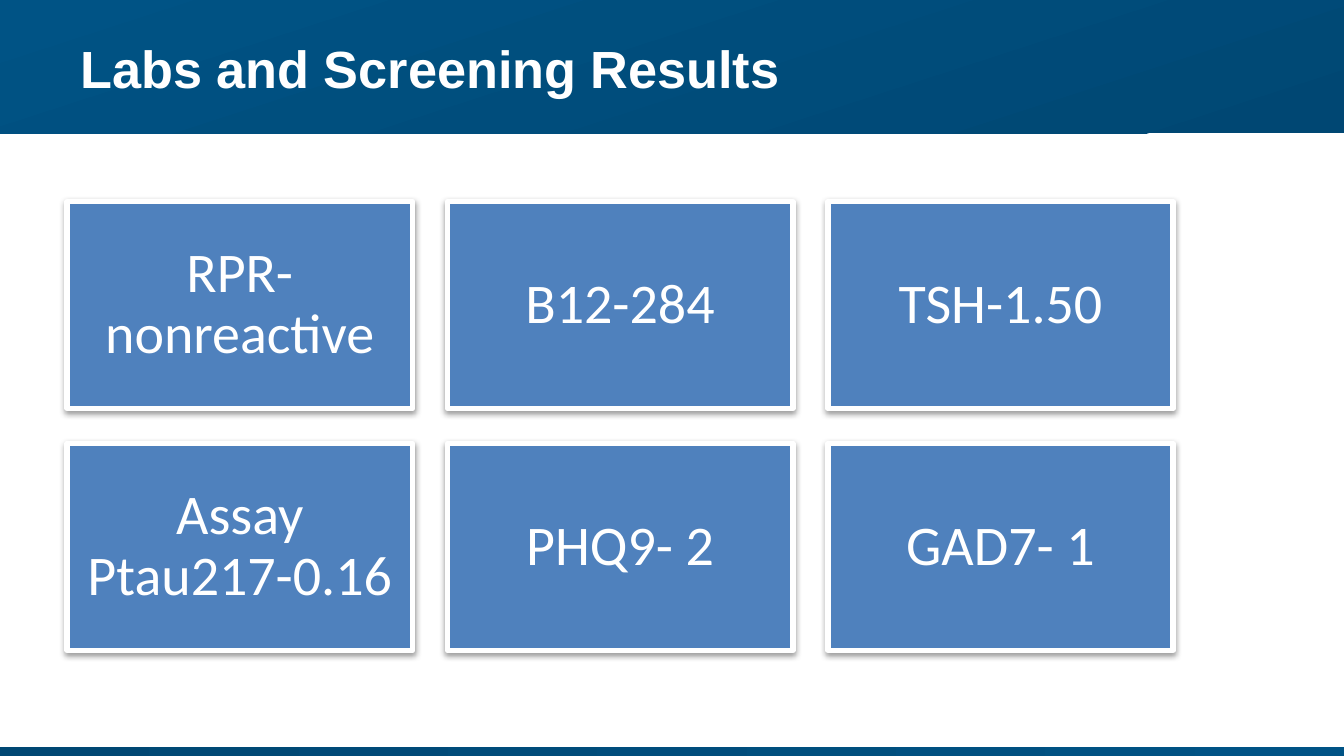
from lxml.etree import SubElement
from pptx import Presentation
from pptx.dml.color import RGBColor
from pptx.enum.shapes import MSO_SHAPE
from pptx.enum.text import MSO_ANCHOR, PP_ALIGN
from pptx.oxml.ns import qn
from pptx.util import Inches, Pt

LABS = ["RPR-nonreactive", "B12-284", "TSH-1.50",
        "Assay Ptau217-0.16", "PHQ9- 2", "GAD7- 1"]


def color(text):
    """Turn a hex string into a colour."""
    return RGBColor.from_string(text)


def add_rect(slide, left, top, width, height):
    """Add a rectangle without the theme shadow."""
    rect = slide.shapes.add_shape(MSO_SHAPE.RECTANGLE, Inches(left), Inches(top),
                                  Inches(width), Inches(height))
    rect.shadow.inherit = False
    return rect


def add_band(slide, top, height, angle):
    """Add a full-width band with the blue gradient."""
    band = add_rect(slide, 0, top, 10, height)
    band.line.fill.background()
    band.fill.gradient()
    band.fill.gradient_angle = angle
    for stop, tone in zip(band.fill.gradient_stops, ("004773", "005385")):
        stop.color.rgb = color(tone)


def add_run(para, text, font, size, bold=False):
    """Add a white run of text."""
    run = para.add_run()
    run.text = text
    run.font.name = font
    run.font.size = Pt(size)
    run.font.bold = bold
    run.font.color.rgb = color("FFFFFF")


def add_title(slide, text):
    """Add the slide title over the top band."""
    box = slide.shapes.add_textbox(Inches(0.5), Inches(0.01), Inches(9), Inches(0.99))
    frame = box.text_frame
    frame.word_wrap = True
    frame.vertical_anchor = MSO_ANCHOR.MIDDLE
    add_run(frame.paragraphs[0], text, "Arial", 28, True)


def add_shadow(shape):
    """Add a soft shadow below the shape."""
    effects = shape.element.spPr.find(qn("a:effectLst"))
    outer = SubElement(effects, qn("a:outerShdw"), blurRad=str(Pt(3.1)),
                       dist=str(Pt(1.6)), dir="5400000", rotWithShape="0")
    tone = SubElement(outer, qn("a:srgbClr"), val="000000")
    SubElement(tone, qn("a:alpha"), val="38000")


def add_card(slide, left, top, text):
    """Add a result card with centred text."""
    card = add_rect(slide, left, top, 2.57, 1.54)
    card.fill.solid()
    card.fill.fore_color.rgb = color("4F81BD")
    card.line.color.rgb = color("FFFFFF")
    card.line.width = Pt(3)
    add_shadow(card)
    frame = card.text_frame
    frame.word_wrap = True
    frame.vertical_anchor = MSO_ANCHOR.MIDDLE
    frame.margin_left = frame.margin_right = Inches(0.12)
    frame.margin_top = frame.margin_bottom = Inches(0.12)
    para = frame.paragraphs[0]
    para.alignment = PP_ALIGN.CENTER
    para.line_spacing = 0.9
    add_run(para, text, "Calibri", 30)


def main():
    """Build and save the slide."""
    deck = Presentation()
    deck.slide_width, deck.slide_height = Inches(10), Inches(10) * 9 // 16
    slide = deck.slides.add_slide(deck.slide_layouts[6])
    add_band(slide, 0, 0.99, 108)
    add_band(slide, 5.56, 0.08, 0)
    add_title(slide, "Labs and Screening Results")
    for index, text in enumerate(LABS):
        row, col = divmod(index, 3)
        add_card(slide, 0.5 + 2.83 * col, 1.5 + 1.8 * row, text)
    deck.save("out.pptx")


if __name__ == "__main__":
    main()
